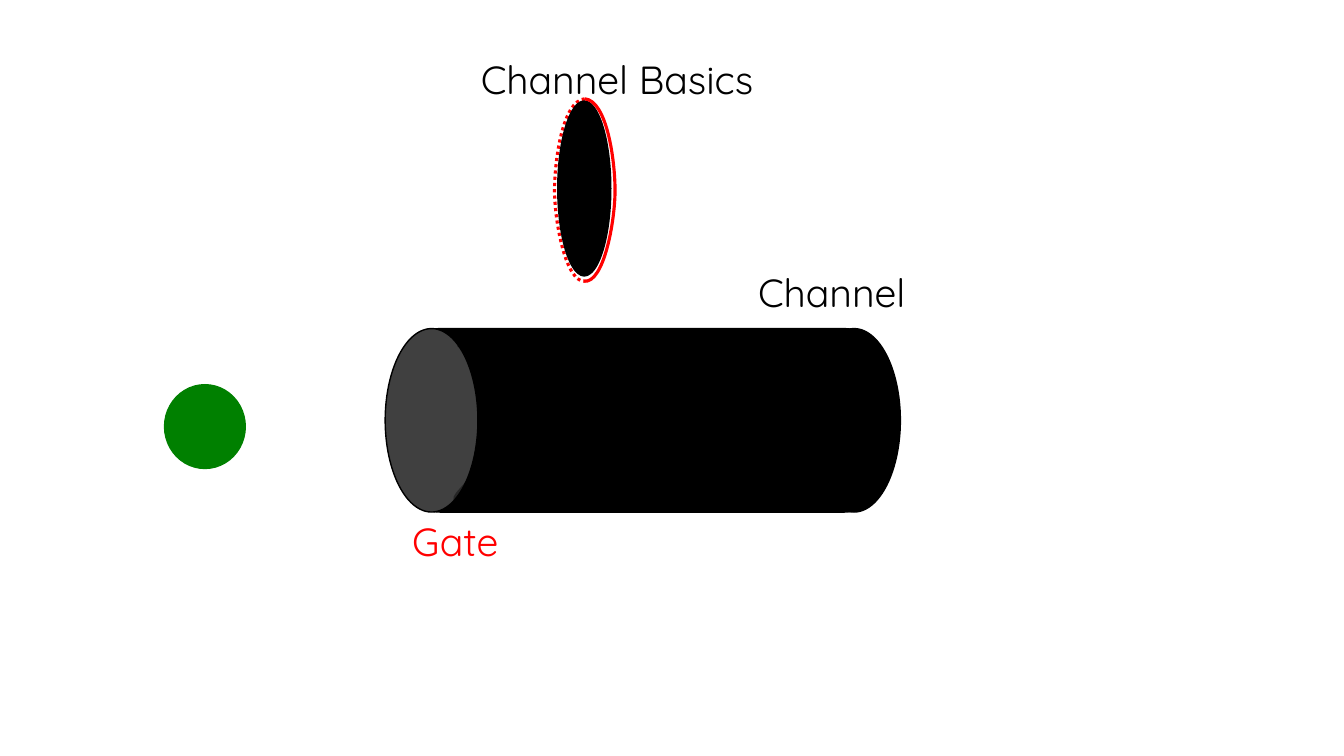
import dataclasses

import lxml.etree
import pptx
import pptx.dml.color
import pptx.enum.dml
import pptx.enum.shapes
import pptx.enum.text
import pptx.oxml.ns
import pptx.util

SHAPE = pptx.enum.shapes.MSO_SHAPE
DASH = pptx.enum.dml.MSO_LINE
qn = pptx.oxml.ns.qn


@dataclasses.dataclass(frozen=True)
class Theme:
    black: str = "000000"
    grey: str = "404040"
    red: str = "FF0000"
    green: str = "008000"
    font: str = "Quicksand"
    size: int = 28
    thin: float = 1
    thick: float = 2.25


class Canvas:
    def __init__(self, prs, theme, cell=0.1):
        self.theme = theme
        self.cell = cell
        self.s = prs.slides.add_slide(prs.slide_layouts[6])

    def grid(self, *cells):
        return [pptx.util.Inches(c * self.cell) for c in cells]

    def rgb(self, value):
        return pptx.dml.color.RGBColor.from_string(value)

    def paint(self, sp, fill=None, alpha=None, line=None, width=None, dash=None):
        sp.shadow.inherit = False
        for part, color in ((sp.fill, fill), (sp.line.fill, line)):
            if color is None:
                part.background()
            else:
                part.solid()
                part.fore_color.rgb = self.rgb(color)
        if alpha is not None:
            clr = sp._element.spPr.find(qn("a:solidFill")).find(qn("a:srgbClr"))
            lxml.etree.SubElement(clr, qn("a:alpha")).set("val", str(alpha * 1000))
        if line is not None:
            fmt = {"width": pptx.util.Pt(width), "dash_style": dash}
            for name, value in fmt.items():
                setattr(sp.line, name, value)
        return sp

    def shape(self, kind, col, row, cols, rows, **style):
        sp = self.s.shapes.add_shape(kind, *self.grid(col, row, cols, rows))
        return self.paint(sp, **style)

    def curve(self, box, points, close=False, **style):
        builder = self.s.shapes.build_freeform(*self.grid(*points[0]))
        builder.add_line_segments([self.grid(*pt) for pt in points[3::3]], close=close)
        sp = builder.convert_to_shape()
        frame = dict(zip(("left", "top", "width", "height"), self.grid(*box)))
        for name, value in frame.items():
            setattr(sp, name, value)
        outline = next(sp._element.iter(qn("a:path")))
        for name, side in {"w": "width", "h": "height"}.items():
            outline.set(name, str(frame[side]))
        spots = [self.grid(x - box[0], y - box[1]) for x, y in points]
        start = next(outline.iter(qn("a:pt")))
        start.set("x", str(spots[0][0]))
        start.set("y", str(spots[0][1]))
        for i, segment in enumerate(outline.findall(qn("a:lnTo"))):
            bend = lxml.etree.Element(qn("a:cubicBezTo"))
            for x, y in spots[3 * i + 1:3 * i + 4]:
                lxml.etree.SubElement(bend, qn("a:pt"), x=str(x), y=str(y))
            outline.replace(segment, bend)
        return self.paint(sp, **style)

    def label(self, text, col, row, cols, rows=4.9, color=None):
        th = self.theme
        tf = self.s.shapes.add_textbox(*self.grid(col, row, cols, rows)).text_frame
        tf.word_wrap = False
        tf.auto_size = pptx.enum.text.MSO_AUTO_SIZE.SHAPE_TO_FIT_TEXT
        p = tf.paragraphs[0]
        p.line_spacing = pptx.util.Pt(th.size)
        r = p.add_run()
        r.text = text
        for name, value in {"name": th.font, "size": pptx.util.Pt(th.size)}.items():
            setattr(r.font, name, value)
        r.font.color.rgb = self.rgb(color or th.black)


def main():
    prs = pptx.Presentation()
    prs.slide_width = pptx.util.Inches(13.33)
    prs.slide_height = pptx.util.Inches(7.5)
    th = Theme()
    c = Canvas(prs, th)

    top, end_width, height = 32.6, 9.2, 18.2
    outline = {"line": th.black, "width": th.thin}
    c.shape(SHAPE.ROUNDED_RECTANGLE, 40.6, top, 46.2, height, fill=th.black, **outline)
    c.shape(SHAPE.OVAL, 80.1, top, end_width, height, fill=th.black, **outline)
    c.shape(SHAPE.OVAL, 79.3, 33.3, end_width, 17.2, fill=th.black)
    c.label("Channel", 74.2, 26.9, 18.4)
    c.shape(SHAPE.OVAL, 38.2, top, end_width, height, fill=th.grey, **outline)
    c.label("Gate", 39.9, 51.6, 12, color=th.red)

    ring_left = [(58, 9.8), (55.8, 10), (55, 15.9), (55, 18.9),
                 (55, 21.9), (56.1, 28.2), (58.1, 27.9)]
    ring_right = [(116 - x, y) for x, y in ring_left]
    ring = {"line": th.red, "width": th.thick}
    c.curve((55, 9.8, 3.1, 18.1), ring_left, dash=DASH.ROUND_DOT, **ring)
    c.shape(SHAPE.OVAL, 55.25, 9.95, 5.4, 17.5, fill=th.black)
    c.shape(SHAPE.OVAL, 16.25, 38.1, 8.15, 8.45, fill=th.green)

    shade = [(49.6, 34.4), (43.7, 34.4), (45.3, 33.7), (46.3, 35.4),
             (47.4, 36.8), (47.4, 40.8), (47.5, 42.8),
             (47.5, 44.8), (46.8, 46), (46.5, 47.2),
             (46.1, 48.4), (43.7, 49.6), (45.8, 50.1),
             (48, 50.6), (53.7, 50.3), (59.2, 50.1),
             (64.8, 49.8), (73.2, 51.4), (79.1, 48.6),
             (85, 45.8), (87, 38.1), (82.1, 35.7),
             (77.2, 33.4), (55.6, 34.5), (49.6, 34.4)]
    c.curve((45, 34.2, 39.9, 16.2), shade, close=True, fill=th.black, alpha=40)
    c.curve((57.9, 9.8, 3.1, 18.1), ring_right, **ring)
    c.label("Channel Basics", 46.7, 5.75, 30.9)

    prs.save("out.pptx")


if __name__ == "__main__":
    main()
